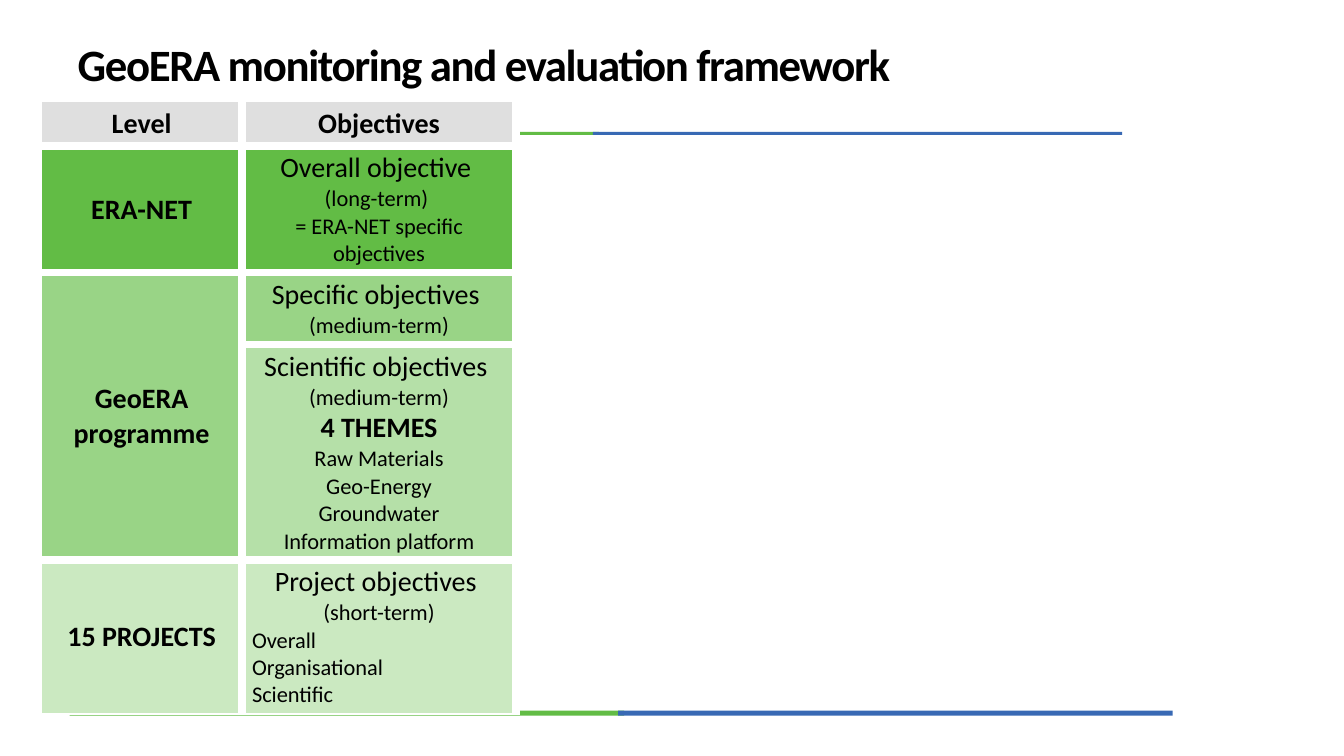
from lxml.etree import SubElement as Sub
from pptx import Presentation
from pptx.dml.color import RGBColor as Rgb
from pptx.enum.shapes import MSO_SHAPE as Shape
from pptx.enum.text import MSO_ANCHOR as Anchor, MSO_AUTO_SIZE as Fit, PP_ALIGN as Align
from pptx.oxml.ns import qn
from pptx.util import Pt

SCALE = 9144
FONT = "Calibri"
TITLE = "GeoERA monitoring and evaluation framework"
GREEN, BLUE, WHITE, BLACK = "62BC45", "3869B4", "FFFFFF", "000000"
BARS = [
    (69, 705, 550, 5, GREEN),
    (613, 705, 550, 5, BLUE),
    (69, 131, 525, 3, GREEN),
    (588, 131, 525, 3, BLUE),
]
COLS = [199, 272]
STYLES = {
    "head": (20, True, Align.CENTER),
    "goal": (20, False, Align.CENTER),
    "note": (16, False, Align.CENTER),
    "list": (16, False, Align.LEFT),
}
ROWS = [
    (43, ("DFDFDF", [("Level", "head")]), ("DFDFDF", [("Objectives", "head")])),
    (121, (GREEN, [("ERA-NET", "head")]), (GREEN, [
        ("Overall objective ", "goal"),
        ("(long-term) ", "note"),
        ("= ERA-NET specific objectives", "note"),
    ])),
    (69, ("99D486", [("GeoERA programme", "head")]), ("99D486", [
        ("Specific objectives ", "goal"),
        ("(medium-term)", "note"),
    ])),
    (206, None, ("B5E0A8", [
        ("Scientific objectives ", "goal"),
        ("(medium-term)", "note"),
        ("4 THEMES", "head"),
        ("Raw Materials", "note"),
        ("Geo-Energy", "note"),
        ("Groundwater", "note"),
        ("Information platform", "note"),
    ])),
    (152, ("CBE9C1", [("15 PROJECTS", "head")]), ("CBE9C1", [
        ("Project objectives ", "goal"),
        ("(short-term)", "note"),
        ("Overall", "list"),
        ("Organisational", "list"),
        ("Scientific", "list"),
    ])),
]


def px(n):
    return n * SCALE


def paint(fill, tint):
    fill.solid()
    fill.fore_color.rgb = Rgb.from_string(tint)


def style(run, size, bold):
    run.font.name = FONT
    run.font.size = Pt(size)
    run.font.bold = bold
    run.font.color.rgb = Rgb.from_string(BLACK)


def border(cell, sides):
    props = cell._tc.get_or_add_tcPr()
    for side in sides:
        line = Sub(props, qn("a:ln" + side), w=str(Pt(6)))
        Sub(Sub(line, qn("a:solidFill")), qn("a:srgbClr"), val=WHITE)


def write(cell, lines):
    cell.text_frame.text = "\n".join(text for text, _ in lines)
    for para, (_, kind) in zip(cell.text_frame.paragraphs, lines):
        size, bold, para.alignment = STYLES[kind]
        for run in para.runs:
            style(run, size, bold)


def main():
    deck = Presentation()
    deck.slide_width, deck.slide_height = px(1333), px(750)
    slide = deck.slides.add_slide(deck.slide_layouts[5])

    for x, y, w, h, tint in BARS:
        bar = slide.shapes.add_shape(Shape.RECTANGLE, px(x), px(y), px(w), px(h))
        bar.shadow.inherit = False
        paint(bar.fill, tint)
        bar.line.fill.background()

    title = slide.shapes.title
    title.left, title.top, title.width, title.height = px(67), px(31), px(1107), px(65)
    frame = title.text_frame
    frame.text = TITLE
    frame.auto_size = Fit.NONE
    frame.vertical_anchor = Anchor.MIDDLE
    para = frame.paragraphs[0]
    para.alignment = Align.LEFT
    style(para.runs[0], 32, True)
    para.runs[0].font._element.set("spc", "-100")

    high = sum(row[0] for row in ROWS)
    table = slide.shapes.add_table(
        len(ROWS), len(COLS), px(41), px(101), px(sum(COLS)), px(high)).table
    table.horz_banding = table.first_row = False
    for col, w in zip(table.columns, COLS):
        col.width = px(w)
    for r, (h, *cells) in enumerate(ROWS):
        table.rows[r].height = px(h)
        for c, item in enumerate(cells):
            cell = table.cell(r, c)
            sides = ["L"] * (c > 0) + ["R"] + ["T"] * (r > 0) + ["B"] * (r < len(ROWS) - 1)
            border(cell, sides)
            if item is None:
                table.cell(r - 1, c).merge(cell)
                continue
            tint, lines = item
            paint(cell.fill, tint)
            write(cell, lines)
            if c == 0 and r > 0:
                cell.vertical_anchor = Anchor.MIDDLE

    deck.save("out.pptx")


if __name__ == "__main__":
    main()
